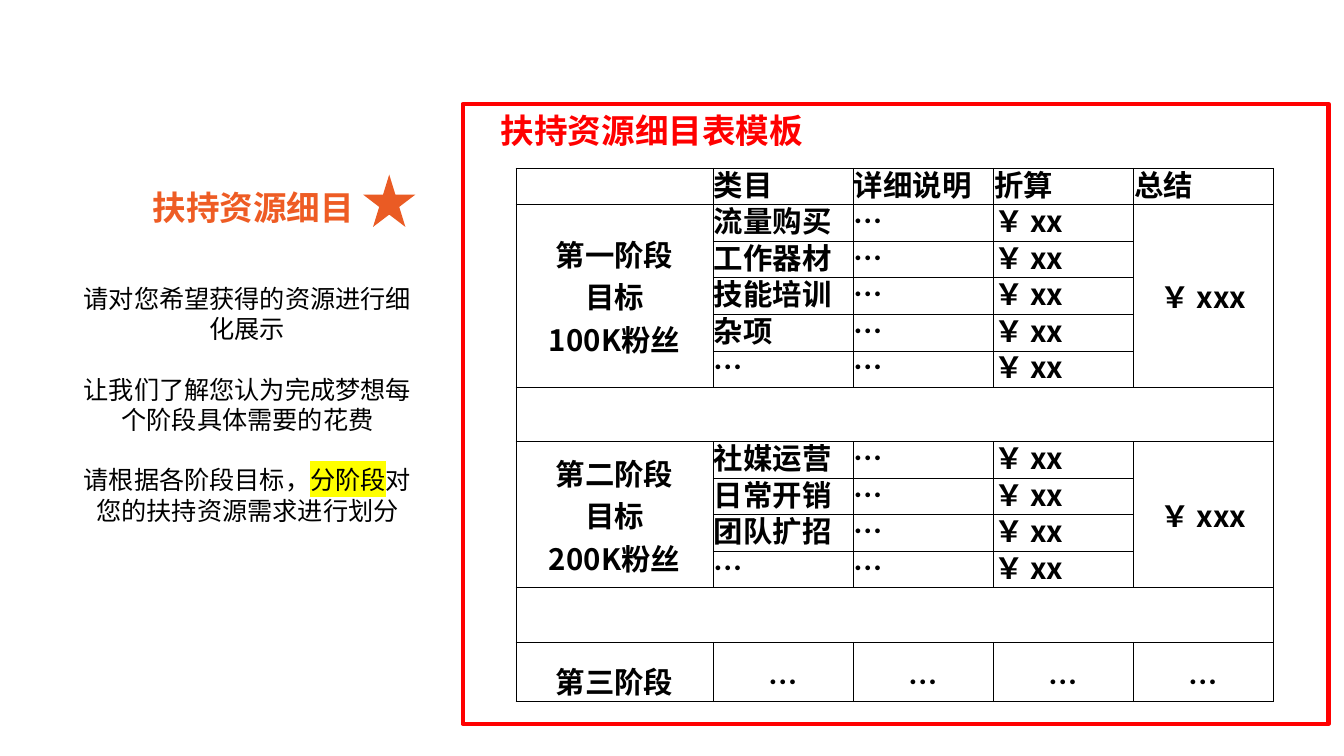
import pptx
import pptx.util
import pptx.dml.color
import pptx.enum.shapes
import pptx.enum.text
import pptx.oxml
import pptx.oxml.ns
import lxml.etree

Cm = pptx.util.Cm
Pt = pptx.util.Pt
ALIGN = pptx.enum.text.PP_ALIGN
ANCHOR = pptx.enum.text.MSO_ANCHOR
SHAPE = pptx.enum.shapes.MSO_SHAPE
qn = pptx.oxml.ns.qn


def rgb(value):
    return pptx.dml.color.RGBColor.from_string(value)


def add_color(parent, value):
    lxml.etree.SubElement(parent, qn("a:srgbClr")).set("val", value)


class SlideBuilder:
    font = "Noto Sans CJK SC"
    black = "000000"
    red = "FF0000"
    orange = "EE5C24"
    star_orange = "EA5B24"
    yellow = "FFFF00"

    def __init__(self, slide):
        self.slide = slide

    def style_run(self, r, size, color, bold=False):
        r.font.size = Pt(size)
        r.font.bold = bold
        r.font.color.rgb = rgb(color)
        r.font.name = self.font
        latin = r.font._element.find(qn("a:latin"))
        ea = latin.makeelement(qn("a:ea"), {"typeface": self.font})
        latin.addnext(ea)

    def highlight(self, r):
        latin = r.font._element.find(qn("a:latin"))
        mark = latin.makeelement(qn("a:highlight"), {})
        add_color(mark, self.yellow)
        latin.addprevious(mark)

    def style_paragraph(self, p, size, color, bold=False, align=ALIGN.CENTER, compact=True):
        p.alignment = align
        p.space_before = p.space_after = Pt(0)
        p.line_spacing = Pt(size * 1.2) if compact else 1.0
        for r in p.runs:
            self.style_run(r, size, color, bold)

    def place(self, sp, left, top, width, height):
        sp.left, sp.top, sp.width, sp.height = Cm(left), Cm(top), Cm(width), Cm(height)
        tf = sp.text_frame
        tf.word_wrap = True
        tf.auto_size = pptx.enum.text.MSO_AUTO_SIZE.NONE
        tf.vertical_anchor = ANCHOR.TOP
        return tf

    def title(self, text, box):
        tf = self.place(self.slide.shapes.title, *box)
        tf.text = text
        self.style_paragraph(tf.paragraphs[0], 24, self.orange, True)

    def body(self, paragraphs, marked, box):
        tf = self.place(self.slide.placeholders[1], *box)
        for i, text in enumerate(paragraphs):
            p = tf.paragraphs[0] if i == 0 else tf.add_paragraph()
            before, mark, after = text.partition(marked)
            for part in filter(None, (before, mark, after)):
                p.add_run().text = part
            pPr = p._p.get_or_add_pPr()
            pPr.set("marL", "0")
            pPr.set("indent", "0")
            lxml.etree.SubElement(pPr, qn("a:buNone"))
            self.style_paragraph(p, 18, self.black)
            if i:
                p.space_before = Pt(21.6)
            for r in p.runs:
                if r.text == marked:
                    self.highlight(r)

    def label(self, text, color, box):
        tf = self.place(self.slide.shapes.add_textbox(0, 0, 0, 0), *box)
        tf.text = text
        self.style_paragraph(tf.paragraphs[0], 24, color, True, ALIGN.LEFT)

    def shape(self, kind, box, fill=None, line=None):
        sp = self.slide.shapes.add_shape(kind, *map(Cm, box))
        sp.shadow.inherit = False
        if fill:
            sp.fill.solid()
            sp.fill.fore_color.rgb = rgb(fill)
        else:
            sp.fill.background()
        if line:
            sp.line.color.rgb = rgb(line)
            sp.line.width = Pt(3)
        else:
            sp.line.fill.background()

    def cell_borders(self, cell):
        tcPr = cell._tc.get_or_add_tcPr()
        for i, side in enumerate(("a:lnL", "a:lnR", "a:lnT", "a:lnB")):
            ln = tcPr.makeelement(qn(side), {"w": str(Pt(0.5))})
            add_color(lxml.etree.SubElement(ln, qn("a:solidFill")), self.black)
            tcPr.insert(i, ln)

    def table(self, col_widths, row_heights, left, top):
        size = (sum(col_widths), sum(row_heights))
        frame = self.slide.shapes.add_table(
            len(row_heights), len(col_widths), *map(Cm, (left, top, *size)))
        table = frame.table
        table.first_row = table.horz_banding = False
        for col, width in zip(table.columns, col_widths):
            col.width = Cm(width)
        for row, height in zip(table.rows, row_heights):
            row.height = Cm(height)
        for cell in table.iter_cells():
            cell.margin_left = cell.margin_right = cell.margin_top = Cm(0.02)
            cell.margin_bottom = 0
            cell.fill.background()
            self.cell_borders(cell)
        return table

    def cell(self, cell, text, align=ALIGN.LEFT, middle=False):
        cell.text_frame.text = text
        cell.vertical_anchor = ANCHOR.MIDDLE if middle else ANCHOR.BOTTOM
        if middle:
            cell.margin_left = cell.margin_right = Cm(0.48)
            cell.margin_top = cell.margin_bottom = Cm(0.2)
        for p in cell.text_frame.paragraphs:
            self.style_paragraph(p, 21, self.black, True, align, not middle)


def main():
    prs = pptx.Presentation()
    prs.slide_width, prs.slide_height = Cm(33.87), Cm(19.05)
    s = SlideBuilder(prs.slides.add_slide(prs.slide_layouts[1]))

    s.title("扶持资源细目", (1.75, 4.58, 9.27, 1.27))
    s.body(
        ["请对您希望获得的资源进行细化展示",
         "让我们了解您认为完成梦想每个阶段具体需要的花费",
         "请根据各阶段目标，分阶段对您的扶持资源需求进行划分"],
        "分阶段", (1.75, 7.01, 8.97, 6.4))
    s.shape(SHAPE.RECTANGLE, (11.66, 2.62, 21.82, 15.62), line=s.red)
    s.label("扶持资源细目表模板", s.red, (12.37, 2.64, 8.4, 1.27))

    header = ["类目", "详细说明", "折算", "总结"]
    stages = [
        ("第一阶段\n目标\v100K粉丝", ["流量购买", "工作器材", "技能培训", "杂项", "…"]),
        ("第二阶段\n目标\v200K粉丝", ["社媒运营", "日常开销", "团队扩招", "…"]),
    ]
    line, gap = 0.92, 1.37
    heights = [line]
    for _, items in stages:
        heights += [line] * len(items) + [gap]
    heights.append(1.5)
    table = s.table([4.97] + [3.53] * 4, heights, 13, 4.24)

    for col, text in enumerate(header, 1):
        s.cell(table.cell(0, col), text)
    row = 1
    for goal, items in stages:
        end = row + len(items)
        for col, text in ((0, goal), (4, "￥ xxx")):
            table.cell(row, col).merge(table.cell(end - 1, col))
            s.cell(table.cell(row, col), text, ALIGN.CENTER, True)
        for i, item in enumerate(items, row):
            for col, text in enumerate((item, "…", "￥ xx"), 1):
                s.cell(table.cell(i, col), text)
        table.cell(end, 0).merge(table.cell(end, 4))
        row = end + 1
    for col, text in enumerate(["第三阶段"] + ["…"] * 4):
        s.cell(table.cell(row, col), text, ALIGN.CENTER)

    s.shape(SHAPE.STAR_5_POINT, (9.15, 4.4, 1.32, 1.32), fill=s.star_orange)
    prs.save("out.pptx")


if __name__ == "__main__":
    main()
